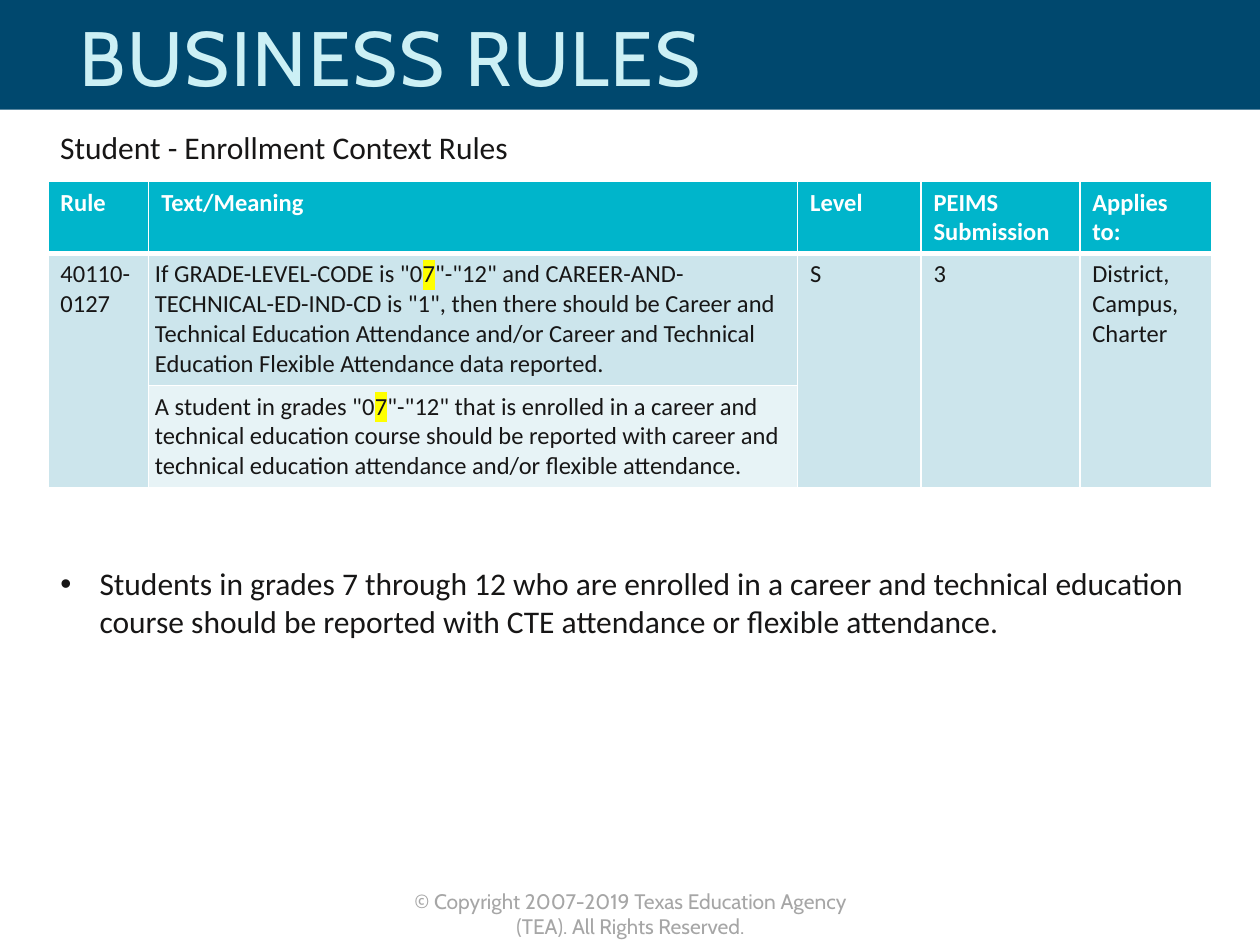
"""Builds the Business Rules slide with its enrollment rule table."""
import pptx
import pptx.util
import pptx.dml.color
import pptx.enum.shapes
import pptx.enum.text
import pptx.oxml
import pptx.oxml.ns

WIDE, HIGH = 10, 7.5
INK, WHITE, TEAL, PALE, FAINT = "171616", "FFFFFF", "00B5CB", "CCE5EC", "E7F3F6"
TITLE = "BUSINESS RULES"
LEAD = "Student - Enrollment Context Rules"
POINT = ("Students in grades 7 through 12 who are enrolled in a career and technical "
         "education course should be reported with CTE attendance or flexible attendance.")
NOTE = "© Copyright 2007-2019 Texas Education Agency (TEA). All Rights Reserved."
MARK = "7"
RULE = ('If GRADE-LEVEL-CODE is "0', MARK,
        '"-"12" and CAREER-AND-TECHNICAL-ED-IND-CD is "1", then there should be Career '
        'and Technical Education Attendance and/or Career and Technical Education '
        'Flexible Attendance data reported.')
SENSE = ('A student in grades "0', MARK,
         '"-"12" that is enrolled in a career and technical education course should be '
         'reported with career and technical education attendance and/or flexible attendance.')
ROWS = [
    [[["Rule"]], [["Text/Meaning"]], [["Level"]], [["PEIMS"], ["Submission"]], [["Applies to:"]]],
    [[["40110-0127"]], [RULE], [["S"]], [["3"]], [["District,"], ["Campus,"], ["Charter"]]],
    [None, [SENSE], None, None, None],
]
COLS = [0.8, 5.15, 0.98, 1.26, 1.05]
TALL = [0.57, 1.05, 0.81]
FILLS = [TEAL, PALE, FAINT]

inch, pt = pptx.util.Inches, pptx.util.Pt


def hue(code):
    return pptx.dml.color.RGBColor.from_string(code)


def node(tag, body="", **attrs):
    extra = "".join(f' {key}="{val}"' for key, val in attrs.items())
    space = pptx.oxml.ns.nsdecls("a")
    return pptx.oxml.parse_xml(f"<a:{tag} {space}{extra}>{body}</a:{tag}>")


def paint(shape, code):
    shape.fill.solid()
    shape.fill.fore_color.rgb = hue(code)


def place(shape, left, top, width, height):
    shape.left, shape.top = inch(left), inch(top)
    shape.width, shape.height = inch(width), inch(height)


def write(frame, paras, size, code, face="Calibri", bold=False, align="LEFT"):
    frame.word_wrap = True
    for i, parts in enumerate(paras):
        para = frame.paragraphs[0] if i == 0 else frame.add_paragraph()
        para.alignment = getattr(pptx.enum.text.PP_ALIGN, align)
        para.space_before = pt(0)
        for part in parts:
            run = para.add_run()
            run.text = part
            font = run.font
            font.size, font.name, font.bold = pt(size), face, bold
            font.color.rgb = hue(code)
            if part == MARK:
                props = run._r.get_or_add_rPr()
                fill = props.find(pptx.oxml.ns.qn("a:solidFill"))
                fill.addnext(node("highlight", '<a:srgbClr val="FFFF00"/>'))
    return frame.paragraphs[0]


def edge(cell, head):
    props = cell._tc.get_or_add_tcPr()
    body = f'<a:solidFill><a:srgbClr val="{WHITE}"/></a:solidFill>'
    for i, side in enumerate("LRTB"):
        width = 3 if head and side == "B" else 1
        props.insert(i, node("ln" + side, body, w=pt(width)))


def band(slide):
    bar = slide.shapes.add_shape(pptx.enum.shapes.MSO_SHAPE.RECTANGLE, 0, 0, inch(WIDE), inch(0.87))
    bar.shadow.inherit = False
    paint(bar, "00486E")
    bar.line.fill.background()
    slide.shapes._spTree.insert(2, bar._element)


def label(slide, box, text, *style, **more):
    shape = slide.shapes.add_textbox(*map(inch, box))
    write(shape.text_frame, [[text]], *style, **more)


def grid(slide):
    table = slide.shapes.add_table(len(ROWS), len(COLS), inch(0.38), inch(1.44),
                                   inch(sum(COLS)), inch(sum(TALL))).table
    for col, width in zip(table.columns, COLS):
        col.width = inch(width)
    for r, row in enumerate(ROWS):
        table.rows[r].height = inch(TALL[r])
        for c, paras in enumerate(row):
            cell = table.cell(r, c)
            paint(cell, FILLS[r] if paras else PALE)
            edge(cell, r == 0)
            if paras is None:
                table.cell(r - 1, c).merge(cell)
                continue
            if r and c == 1:
                cell.margin_left = cell.margin_right = inch(0.05)
            write(cell.text_frame, paras, 14, INK if r else WHITE, bold=r == 0)


def main():
    deck = pptx.Presentation()
    deck.slide_width, deck.slide_height = inch(WIDE), inch(HIGH)
    slide = deck.slides.add_slide(deck.slide_layouts[1])
    band(slide)

    title = slide.shapes.title
    place(title, 0.53, 0.05, 8.28, 0.87)
    frame = title.text_frame
    frame.vertical_anchor = pptx.enum.text.MSO_ANCHOR.MIDDLE
    frame.auto_size = pptx.enum.text.MSO_AUTO_SIZE.NONE
    para = write(frame, [[TITLE]], 44, "CCF0F5", "Cabin")
    para.line_spacing = 0.9
    para.runs[0]._r.get_or_add_rPr().set("spc", "100")

    label(slide, (0.38, 0.97, 8.2, 0.4), LEAD, 18, INK)
    grid(slide)

    body = slide.placeholders[1]
    place(body, 0.38, 4.43, 9.23, 0.71)
    body.text_frame.auto_size = pptx.enum.text.MSO_AUTO_SIZE.NONE
    para = write(body.text_frame, [[POINT]], 18, INK)
    props = para._p.get_or_add_pPr()
    props.set("marL", str(inch(0.31)))
    props.set("indent", str(inch(-0.31)))
    props.append(node("buFont", typeface="Arial"))
    props.append(node("buChar", char="•"))

    label(slide, (3.04, 7, 3.93, 0.3), NOTE, 12, "A6A6A6", "Cabin", align="CENTER")
    deck.save("out.pptx")


if __name__ == "__main__":
    main()
